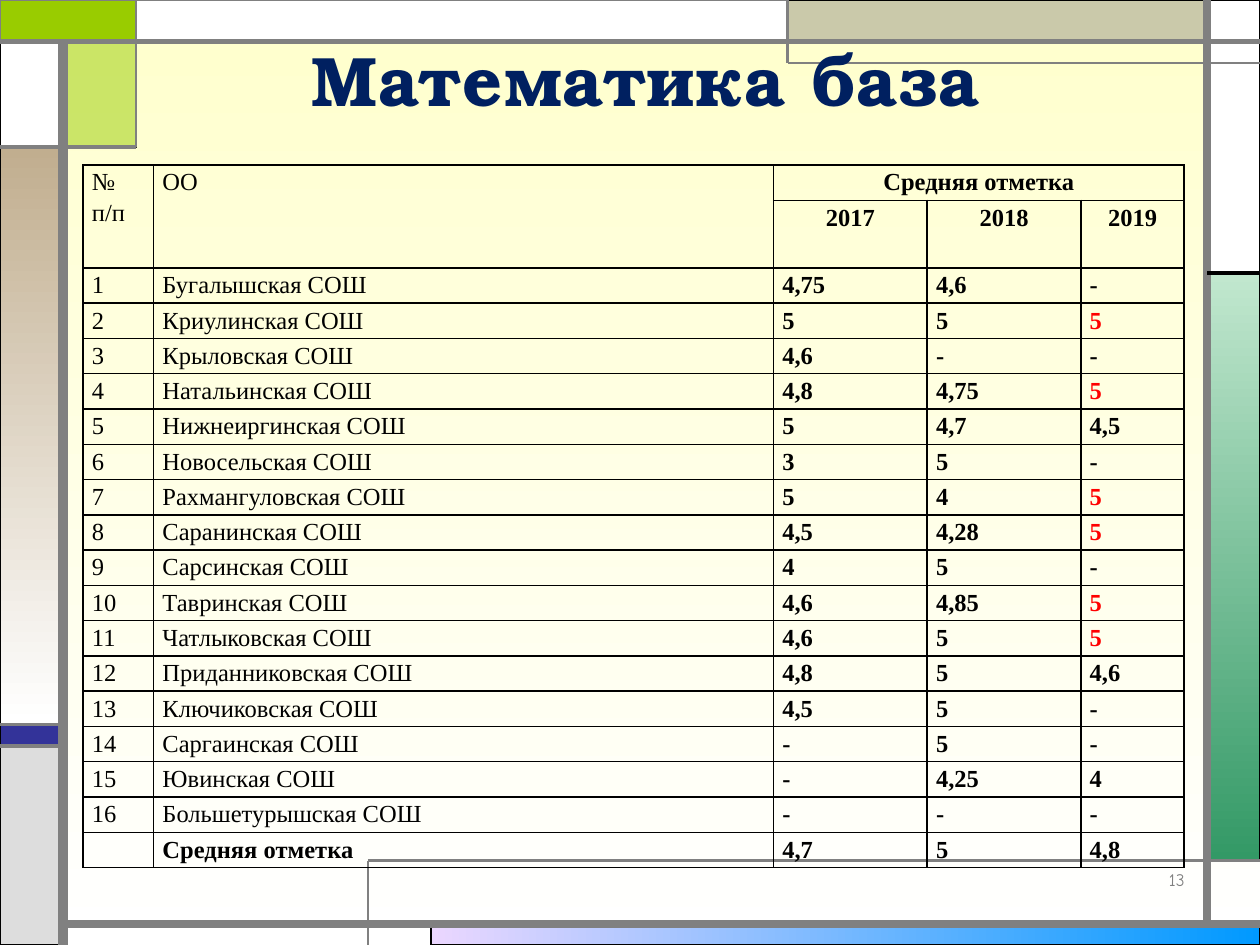
import pptx
import pptx.util
import pptx.dml.color
import pptx.enum.shapes
import pptx.enum.text
import pptx.oxml
import pptx.oxml.ns
import lxml.etree

Inches, Pt = pptx.util.Inches, pptx.util.Pt
ALIGN = pptx.enum.text.PP_ALIGN
ANCHOR = pptx.enum.text.MSO_ANCHOR
qn = pptx.oxml.ns.qn

THEME = {
    "title_font": "TeX Gyre Bonum", "table_font": "Times New Roman", "number_font": "Comic Neue",
    "title_size": 40, "table_size": 14, "number_size": 10,
    "title": "002060", "text": "000000", "best": "FF0000", "gray": "808080",
    "lime": "99CC00", "white": "FFFFFF", "background": ("FFFFCC", "FFFFFF"),
}

# Content
TITLE = "Математика база"
PAGE_NUMBER = "13"
YEARS = ["2017", "2018", "2019"]
SCHOOLS = [
    ("Бугалышская СОШ", "4,75", "4,6", "-"),
    ("Криулинская СОШ", "5", "5", "5"),
    ("Крыловская СОШ", "4,6", "-", "-"),
    ("Натальинская СОШ", "4,8", "4,75", "5"),
    ("Нижнеиргинская СОШ", "5", "4,7", "4,5"),
    ("Новосельская СОШ", "3", "5", "-"),
    ("Рахмангуловская СОШ", "5", "4", "5"),
    ("Саранинская СОШ", "4,5", "4,28", "5"),
    ("Сарсинская СОШ", "4", "5", "-"),
    ("Тавринская СОШ", "4,6", "4,85", "5"),
    ("Чатлыковская СОШ", "4,6", "5", "5"),
    ("Приданниковская СОШ", "4,8", "5", "4,6"),
    ("Ключиковская СОШ", "4,5", "5", "-"),
    ("Саргаинская СОШ", "-", "5", "-"),
    ("Ювинская СОШ", "-", "4,25", "4"),
    ("Большетурышская СОШ", "-", "-", "-"),
]
AVERAGE = ("Средняя отметка", "4,7", "5", "4,8")
HEADER = [["№ п/п", "ОО", "Средняя отметка", "", ""], ["", "", *YEARS]]
ROWS = HEADER + [[str(n), *school] for n, school in enumerate(SCHOOLS, 1)] + [["", *AVERAGE]]
MERGES = [((0, 0), (1, 0)), ((0, 1), (1, 1)), ((0, 2), (0, 4))]

# Frame grid: the lines on which panels and rules meet
LEFT, TAB, RIGHT, WIDE = 0.5, 1.08, 9.58, 10
TOP, TAB_END, LOW, HIGH = 0.33, 1.17, 7.33, 7.5
BAND_TOP, BAND_END, GREEN_TOP, GREEN_END = 5.75, 5.92, 2.17, 6.83
KHAKI, INNER = 6.25, 2.92

# Panels: left, top, right, bottom, fill (a pair is a gradient), extras
PANELS = [
    (3.42, LOW, WIDE, HIGH, ("EBD7FF", "0099FF"), {"angle": 0}),
    (RIGHT, GREEN_TOP, WIDE, GREEN_END, ("C1E7CE", "339966"), {}),
    (0, BAND_TOP, LEFT, BAND_END, "333399", {}),
    (0, BAND_END, LEFT, HIGH, "DDDDDD", {}),
    (RIGHT, 0, WIDE, GREEN_TOP, THEME["white"], {}),
    (KHAKI, 0, RIGHT, TOP, "CAC9AA", {}),
    (LEFT, TOP, TAB, TAB_END, THEME["lime"], {"alpha": 50}),
    (0, TAB_END, LEFT, BAND_TOP, ("C1AE8F", "FFFFFF"), {}),
    (0, TOP, LEFT, TAB_END, THEME["white"], {}),
    (0, 0, TAB, TOP, THEME["lime"], {"line": THEME["gray"], "width": 1.5}),
    (TAB, 0, KHAKI, TOP, THEME["white"], {"line": THEME["gray"]}),
]
# Rules: x1, y1, x2, y2, width
RULES = [
    (LEFT, HIGH, LEFT, TOP, 6), (LEFT, LOW, WIDE, LOW, 4.5),
    (RIGHT, LOW, RIGHT, 0, 4.5), (0, TOP, WIDE, TOP, 3),
    (WIDE, 0.5, KHAKI, 0.5, 1.5), (KHAKI, 0.5, KHAKI, 0, 1.5),
    (RIGHT, GREEN_TOP, WIDE, GREEN_TOP, 2.25),
    (TAB, 0, TAB, TAB_END, 1.5), (TAB, TAB_END, 0, TAB_END, 2.25),
    (INNER, HIGH, INNER, GREEN_END, 1.5), (INNER, GREEN_END, WIDE, GREEN_END, 1.5),
    (LEFT, BAND_TOP, 0, BAND_TOP, 2.25), (LEFT, BAND_END, 0, BAND_END, 2.25),
]
COLUMNS = [0.56, 4.92, 1.22, 1.22, 0.82]
ROW_HEIGHT = 0.28


def rgb(value):
    return pptx.dml.color.RGBColor.from_string(value)


def paint(fill, color, angle=270):
    if isinstance(color, str):
        fill.solid()
        fill.fore_color.rgb = rgb(color)
        return
    fill.gradient()
    fill.gradient_angle = angle
    for stop, stop_color in zip(fill.gradient_stops, color):
        stop.color.rgb = rgb(stop_color)


def write(frame, text, font, size, color, bold=False, align=ALIGN.LEFT, spacing=None, tracking=None):
    frame.word_wrap = True
    paragraph = frame.paragraphs[0]
    paragraph.alignment = align
    paragraph.line_spacing = spacing
    if not text:  # an empty cell keeps the line height of its row
        lxml.etree.SubElement(paragraph._p, qn("a:endParaRPr")).set("sz", str(size * 100))
        return
    run = paragraph.add_run()
    run.text = text
    run.font.name, run.font.size, run.font.bold = font, Pt(size), bold
    run.font.color.rgb = rgb(color)
    if tracking:
        run.font._element.set("spc", str(int(tracking * 100)))


def add_panel(slide, left, top, right, bottom, color, angle=270, alpha=None, line="000000", width=0.75):
    panel = slide.shapes.add_shape(
        pptx.enum.shapes.MSO_SHAPE.RECTANGLE,
        Inches(left), Inches(top), Inches(right - left), Inches(bottom - top))
    panel.shadow.inherit = False
    paint(panel.fill, color, angle)
    panel.line.color.rgb, panel.line.width = rgb(line), Pt(width)
    if alpha:
        tint = panel._element.spPr.find(qn("a:solidFill"))[0]
        lxml.etree.SubElement(tint, qn("a:alpha")).set("val", str(alpha * 1000))


def add_rule(slide, x1, y1, x2, y2, width):
    rule = slide.shapes.add_connector(
        pptx.enum.shapes.MSO_CONNECTOR.STRAIGHT, Inches(x1), Inches(y1), Inches(x2), Inches(y2))
    black = (y1, y2) == (GREEN_TOP, GREEN_TOP)
    rule.line.color.rgb = rgb(THEME["text" if black else "gray"])
    rule.line.width = Pt(width)
    lxml.etree.SubElement(rule._element.spPr, qn("a:effectLst"))


def add_borders(cell, color, width):
    properties = cell._tc.get_or_add_tcPr()
    for position, side in enumerate(("a:lnL", "a:lnR", "a:lnT", "a:lnB")):
        border = lxml.etree.Element(qn(side), w=str(Pt(width)))
        solid = lxml.etree.SubElement(border, qn("a:solidFill"))
        lxml.etree.SubElement(solid, qn("a:srgbClr")).set("val", color)
        properties.insert(position, border)


def add_marks_table(slide):
    table = slide.shapes.add_table(
        len(ROWS), len(COLUMNS), Inches(0.66), Inches(1.31),
        Inches(sum(COLUMNS)), Inches(ROW_HEIGHT * len(ROWS))).table
    table.first_row = table.horz_banding = False
    for column, width in zip(table.columns, COLUMNS):
        column.width = Inches(width)
    for first, last in MERGES:
        table.cell(*first).merge(table.cell(*last))
    for r, values in enumerate(ROWS):
        table.rows[r].height = Inches(ROW_HEIGHT)
        for c, value in enumerate(values):
            cell = table.cell(r, c)
            cell.margin_left = cell.margin_right = Inches(0.07)
            cell.margin_top = cell.margin_bottom = 0
            cell.fill.background()
            add_borders(cell, THEME["text"], 1)
            in_header, is_mark = r < len(HEADER), c >= 2
            is_best = not in_header and c == 4 and value == "5"
            write(cell.text_frame, value, THEME["table_font"], THEME["table_size"],
                  THEME["best" if is_best else "text"],
                  bold=is_mark or r == len(ROWS) - 1,
                  align=ALIGN.CENTER if in_header and is_mark else ALIGN.JUSTIFY,
                  spacing=1.15)


def main():
    deck = pptx.Presentation()
    deck.slide_width, deck.slide_height = Inches(WIDE), Inches(HIGH)
    slide = deck.slides.add_slide(deck.slide_layouts[5])
    paint(slide.background.fill, THEME["background"])

    # Decorative frame
    for *place, color, extras in PANELS:
        add_panel(slide, *place, color, **extras)
    for rule in RULES:
        add_rule(slide, *rule)

    # Title, brought in front of the frame
    title = slide.shapes.title
    title.left, title.top, title.width, title.height = map(Inches, (0.59, 0, 9.07, 1.25))
    title.text_frame.vertical_anchor = ANCHOR.MIDDLE
    write(title.text_frame, TITLE, THEME["title_font"], THEME["title_size"], THEME["title"],
          bold=True, align=ALIGN.CENTER, tracking=0.5)
    slide.shapes._spTree.append(title._element)

    # Page number and table
    number = slide.shapes.add_textbox(*map(Inches, (7.17, 6.85, 2.33, 0.42)))
    write(number.text_frame, PAGE_NUMBER, THEME["number_font"], THEME["number_size"],
          THEME["gray"], align=ALIGN.RIGHT)
    add_marks_table(slide)
    deck.save("out.pptx")


if __name__ == "__main__":
    main()
